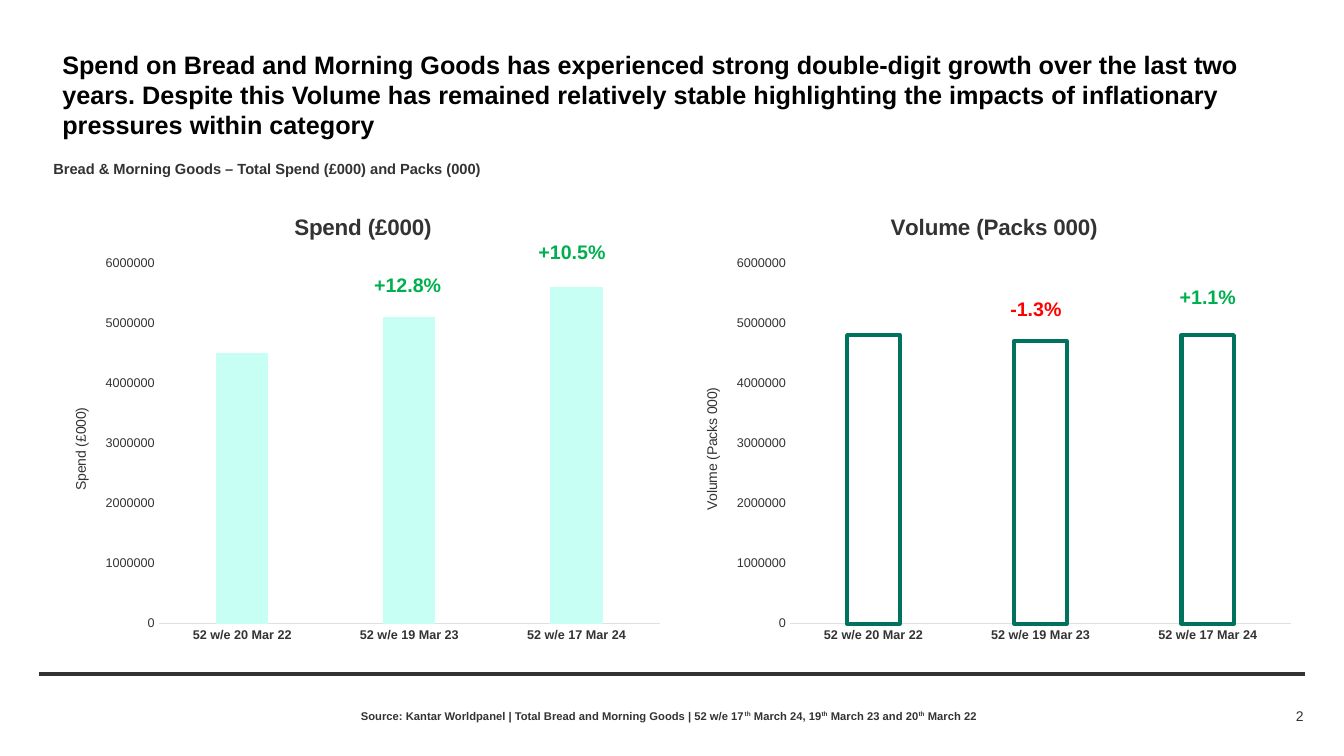
from lxml.etree import SubElement
from pptx import Presentation
from pptx.chart.data import CategoryChartData
from pptx.dml.color import RGBColor
from pptx.enum.chart import XL_CHART_TYPE, XL_TICK_MARK
from pptx.enum.shapes import MSO_CONNECTOR
from pptx.enum.text import MSO_ANCHOR, PP_ALIGN
from pptx.oxml.ns import qn
from pptx.util import Inches, Pt

INK = "333333"
GREEN = "00B050"
RED = "FF0000"
PERIODS = ["52 w/e 20 Mar 22", "52 w/e 19 Mar 23", "52 w/e 17 Mar 24"]
CHART_TOP, CHART_WIDTH, CHART_HEIGHT = 1.93, 6.14, 4.53
PLOT_AREA = {"x": 0.17, "y": 0.15, "w": 0.81, "h": 0.79}


def color(value):
    return RGBColor.from_string(value)


def style(font, size, ink=INK, bold=False):
    font.name = "Arial"
    font.size = Pt(size)
    font.bold = bold
    font.color.rgb = color(ink)


def add_text(page, box, spans, size, ink=INK, bold=True, inset=0,
             anchor=MSO_ANCHOR.TOP, align=PP_ALIGN.LEFT, wrap=True):
    frame = page.shapes.add_textbox(*map(Inches, box)).text_frame
    frame.word_wrap = wrap
    frame.vertical_anchor = anchor
    frame.margin_left = frame.margin_right = Inches(inset)
    frame.margin_top = frame.margin_bottom = Inches(inset / 2)
    para = frame.paragraphs[0]
    para.alignment = align
    for text in spans:
        span = para.add_run()
        span.text = text
        style(span.font, size, ink, bold)
        if text == "th":
            span.font._element.set("baseline", "30000")


def set_title(owner, text, size, bold):
    para = owner.text_frame.paragraphs[0]
    span = para.add_run()
    span.text = text
    style(span.font, size, bold=bold)


def place_plot(chart):
    plot_area = chart._chartSpace.chart.plotArea
    for old in plot_area.findall(qn("c:layout")):
        plot_area.remove(old)
    layout = SubElement(plot_area, qn("c:layout"))
    plot_area.insert(0, layout)
    manual = SubElement(layout, qn("c:manualLayout"))
    settings = {"layoutTarget": "inner", "xMode": "edge", "yMode": "edge", **PLOT_AREA}
    for name, value in settings.items():
        SubElement(manual, qn(f"c:{name}")).set("val", str(value))


def add_column_chart(page, left, title, values, fill=None, outline=None):
    data = CategoryChartData()
    data.categories = PERIODS
    data.add_series("Series 1", values)
    box = map(Inches, (left, CHART_TOP, CHART_WIDTH, CHART_HEIGHT))
    chart = page.shapes.add_chart(XL_CHART_TYPE.COLUMN_CLUSTERED, *box, data).chart
    style(chart.font, 10)
    chart.has_legend = False
    chart.has_title = True
    set_title(chart.chart_title, title, 16, True)
    chart.chart_title.include_in_layout = False
    place_plot(chart)

    plot = chart.plots[0]
    plot.gap_width = 219
    plot.overlap = -27
    plot.vary_by_categories = False
    columns = plot.series[0]
    columns.invert_if_negative = False
    if fill:
        columns.format.fill.solid()
        columns.format.fill.fore_color.rgb = color(fill)
    else:
        columns.format.fill.background()
    if outline:
        columns.format.line.color.rgb = color(outline)
        columns.format.line.width = Pt(3)
    else:
        columns.format.line.fill.background()

    for axis in (chart.category_axis, chart.value_axis):
        axis.major_tick_mark = axis.minor_tick_mark = XL_TICK_MARK.NONE
        axis.has_major_gridlines = False
    period_axis, value_axis = chart.category_axis, chart.value_axis
    style(period_axis.tick_labels.font, 9, bold=True)
    period_axis.format.line.color.rgb = color("E0E0E0")
    period_axis.format.line.width = Pt(0.75)
    style(value_axis.tick_labels.font, 9)
    value_axis.tick_labels.number_format = "General"
    value_axis.tick_labels.number_format_is_linked = False
    value_axis.minimum_scale = 0
    value_axis.maximum_scale = 6000000
    value_axis.major_unit = 1000000
    value_axis.format.line.fill.background()
    value_axis.has_title = True
    set_title(value_axis.axis_title, title, 10, False)


def add_header(page):
    add_text(page, (0.52, 0.44, 12.54, 0.97), [
        "Spend on Bread and Morning Goods has experienced strong double-digit growth "
        "over the last two years. Despite this Volume has remained relatively stable "
        "highlighting the impacts of inflationary pressures within category"],
        18, "000000", inset=0.1)
    add_text(page, (0.53, 1.56, 8.2, 0.22),
             ["Bread & Morning Goods – Total Spend (£000) and Packs (000)"],
             10.5, anchor=MSO_ANCHOR.MIDDLE)


def add_growth_labels(page):
    for left, top, text, ink in [
        (3.71, 2.71, "+12.8%", GREEN),
        (5.34, 2.38, "+10.5%", GREEN),
        (10.02, 2.95, "-1.3%", RED),
        (11.7, 2.83, "+1.1%", GREEN),
    ]:
        add_text(page, (left, top, 0.71, 0.24), [text], 14, ink)


def add_footer(page):
    rule = page.shapes.add_connector(MSO_CONNECTOR.STRAIGHT, Inches(0.39), Inches(6.69),
                                     Inches(12.94), Inches(6.69))
    rule.line.color.rgb = color(INK)
    rule.line.width = Pt(3)
    SubElement(rule._element.spPr, qn("a:effectLst"))
    add_text(page, (3.58, 6.99, 8.2, 0.22), [
        "Source: Kantar Worldpanel | Total Bread and Morning Goods | 52 w/e 17", "th",
        " March 24, 19", "th", " March 23 and 20", "th", " March 22"],
        8, anchor=MSO_ANCHOR.MIDDLE)
    add_text(page, (11.87, 6.99, 1.06, 0.22), ["2"], 10, bold=False,
             anchor=MSO_ANCHOR.MIDDLE, align=PP_ALIGN.RIGHT)


def main():
    deck = Presentation()
    deck.slide_width = Inches(13.33)
    deck.slide_height = Inches(7.5)
    page = deck.slides.add_slide(deck.slide_layouts[6])
    add_header(page)
    add_column_chart(page, 0.53, "Spend (£000)", (4500000, 5100000, 5600000), fill="C7FFF4")
    add_column_chart(page, 6.79, "Volume (Packs 000)", (4800000, 4700000, 4800000),
                     outline="00725D")
    add_growth_labels(page)
    add_footer(page)
    deck.save("out.pptx")


if __name__ == "__main__":
    main()
